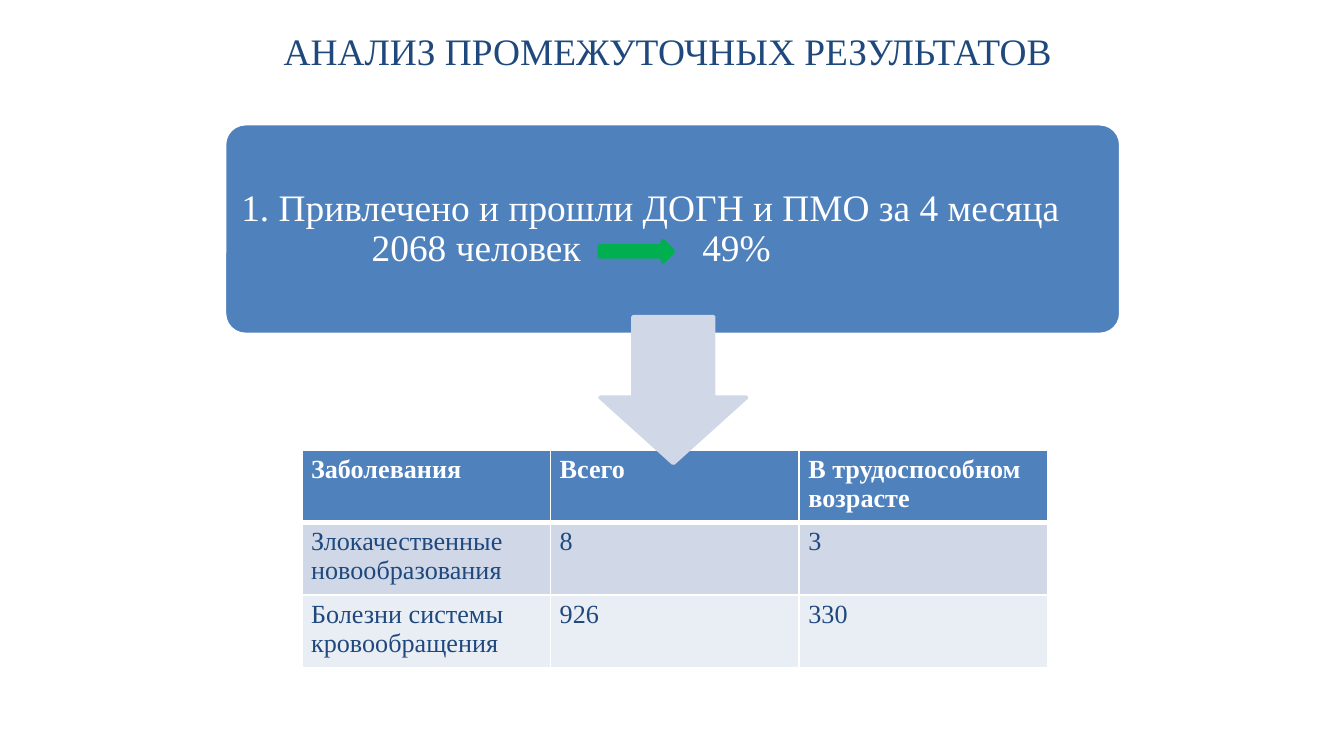
from lxml import etree
from pptx import Presentation
from pptx import util as u
from pptx.dml.color import RGBColor
from pptx.enum import shapes, text
from pptx.oxml.ns import qn

NAVY = RGBColor(0x1F, 0x49, 0x7D)
BLUE = RGBColor(0x4F, 0x81, 0xBD)
PALE = RGBColor(0xD0, 0xD8, 0xE8)
PALEST = RGBColor(0xE9, 0xED, 0xF4)
GREEN = RGBColor(0x00, 0xB0, 0x50)
WHITE = RGBColor(0xFF, 0xFF, 0xFF)

prs = Presentation()
prs.slide_width = u.Inches(10)
prs.slide_height = prs.slide_width * 9 // 16
s = prs.slides.add_slide(prs.slide_layouts[5])


def share(x, y, w, h):
    """Turn percentages of the slide into left, top, width, height."""
    return [int(v * side / 100) for v, side in
            zip((x, y, w, h), (prs.slide_width, prs.slide_height) * 2)]


def write(tf, words, size, color, bold=False):
    tf.word_wrap = True
    p = tf.paragraphs[0]
    p.text = words
    p.alignment = text.PP_ALIGN.LEFT
    for r in p.runs:
        for name, value in dict(name="Times New Roman", size=u.Pt(size), bold=bold).items():
            setattr(r.font, name, value)
        r.font.color.rgb = color
    return p


# Title
title = s.shapes.title
title.left, title.top, title.width, title.height = share(20.1, 2.85, 59.9, 7.8)
tf = title.text_frame
write(tf, "АНАЛИЗ ПРОМЕЖУТОЧНЫХ РЕЗУЛЬТАТОВ", 20, NAVY)
tf.auto_size = text.MSO_AUTO_SIZE.NONE
tf.vertical_anchor = text.MSO_ANCHOR.TOP

# Result panel, then the table, then the arrows that lie over both
kinds = shapes.MSO_SHAPE
panel = s.shapes.add_shape(kinds.ROUNDED_RECTANGLE, *share(16.7, 16.36, 66.7, 27.9))
table = s.shapes.add_table(3, 3, *share(22.45, 59.5, 55.5, 28.8)).table
down = s.shapes.add_shape(kinds.DOWN_ARROW, *share(44.65, 41.9, 10.9, 19.4))
right = s.shapes.add_shape(kinds.RIGHT_ARROW, *share(44.6, 31.82, 5.5, 2.85))

panel.adjustments[0] = 0.1
down.adjustments[0] = 0.55
down.adjustments[1] = 0.45
for sp, fill, line in ((panel, BLUE, WHITE), (down, PALE, PALE), (right, GREEN, GREEN)):
    sp.shadow.inherit = False
    sp.fill.solid()
    sp.fill.fore_color.rgb = fill
    sp.line.color.rgb = line
    sp.line.width = u.Pt(2)

tf = panel.text_frame
tf.margin_left = tf.margin_right = u.Inches(0.08)
tf.vertical_anchor = text.MSO_ANCHOR.MIDDLE
p = write(tf, "1. Привлечено и прошли ДОГН и ПМО за 4 месяца\v\t2068 человек\t49%", 20, WHITE)
p.line_spacing = 0.9
tabs = etree.SubElement(p._p.get_or_add_pPr(), qn("a:tabLst"))
for stop in (0.97, 3.43):
    etree.SubElement(tabs, qn("a:tab"), pos=str(u.Inches(stop)), algn="l")

# Table
rows = (
    ("Заболевания", "Всего", "В трудоспособном возрасте"),
    ("Злокачественные новообразования", "8", "3"),
    ("Болезни системы кровообращения", "926", "330"),
)
for i, (words, fill) in enumerate(zip(rows, (BLUE, PALE, PALEST))):
    for j, word in enumerate(words):
        cell = table.cell(i, j)
        cell.margin_left = cell.margin_right = u.Inches(0.07)
        cell.margin_top = cell.margin_bottom = u.Inches(0.04)
        write(cell.text_frame, word, 14, NAVY if i else WHITE, bold=i == 0)
        tcPr = cell._tc.get_or_add_tcPr()
        for side in "LRTB":
            thick = (i, side) in ((0, "B"), (1, "T"))
            ln = etree.SubElement(tcPr, qn("a:ln" + side), w=str(u.Pt(3 if thick else 1)))
            solid = etree.SubElement(ln, qn("a:solidFill"))
            etree.SubElement(solid, qn("a:srgbClr"), val=str(WHITE))
        cell.fill.solid()
        cell.fill.fore_color.rgb = fill

prs.save("out.pptx")
